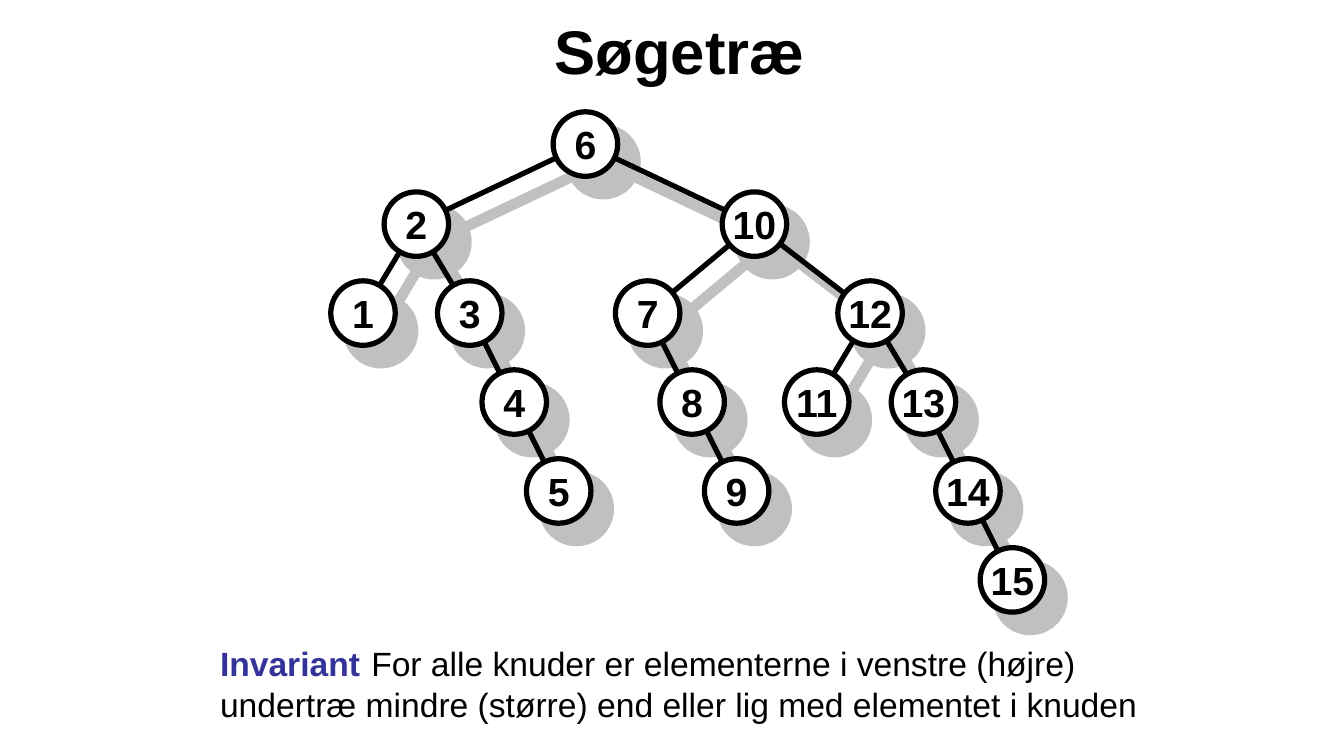
from lxml.etree import SubElement
from pptx import Presentation
from pptx.dml.color import RGBColor as Rgb
from pptx.enum.shapes import MSO_CONNECTOR as Conn, MSO_SHAPE as Shape
from pptx.enum.text import MSO_ANCHOR as Anchor, PP_ALIGN as Align
from pptx.oxml.ns import qn
from pptx.util import Inches, Pt

HUES = {"ink": "000000", "paper": "FFFFFF", "shade": "C0C0C0", "key": "333399"}
ROWS = 85
LEFT, TOP = 40.8, 16.2
SIZE, DROP = 7.25, 2
NODES = {
    6: (25, 0), 2: (6, 9), 10: (44, 9),
    1: (0, 19), 3: (12, 19), 7: (32, 19), 12: (57, 19),
    4: (17, 29), 8: (37, 29), 11: (51, 29), 13: (63, 29),
    5: (22, 39), 9: (42, 39), 14: (68, 39), 15: (73, 49),
}
EDGES = [(11, 12), (13, 15), (2, 6), (6, 10), (10, 12), (7, 10),
         (7, 9), (3, 5), (12, 13), (2, 3), (1, 2)]


class Board:
    font = "Arial"

    def __init__(self, deck):
        self.slide = deck.slides.add_slide(deck.slide_layouts[1])
        self.cell = deck.slide_height / ROWS

    def hue(self, name):
        return Rgb.from_string(HUES[name])

    def grid(self, *cells):
        return [round(n * self.cell) for n in cells]

    def run(self, para, text, size, hue="ink", bold=True):
        run = para.add_run()
        run.text = text
        font = run.font
        font.name, font.size, font.bold = self.font, Pt(size), bold
        font.color.rgb = self.hue(hue)

    def place(self, slot, box, anchor):
        item = self.slide.placeholders[slot]
        item.left, item.top, item.width, item.height = self.grid(*box)
        frame = item.text_frame
        frame.word_wrap, frame.vertical_anchor = True, anchor
        return frame.paragraphs[0]

    def title(self, text, box):
        para = self.place(0, box, Anchor.MIDDLE)
        para.alignment = Align.CENTER
        self.run(para, text, 44)

    def note(self, head, text, box, tab):
        para = self.place(1, box, Anchor.TOP)
        para.space_before = Pt(12)
        props = para._p.get_or_add_pPr()
        props.set("marL", "0")
        props.set("indent", "0")
        SubElement(props, qn("a:buNone"))
        tabs = SubElement(props, qn("a:tabLst"))
        SubElement(tabs, qn("a:tab"), pos=str(self.grid(tab)[0]), algn="l")
        self.run(para, head + "\t", 24, "key")
        self.run(para, text, 24, bold=False)

    def spot(self, key, drop):
        col, row = NODES[key]
        return LEFT + col + drop, TOP + row + drop

    def edge(self, low, high, hue, width, drop):
        ends = self.spot(low, drop) + self.spot(high, drop)
        line = self.slide.shapes.add_connector(Conn.STRAIGHT, *self.grid(*ends))
        line.line.color.rgb = self.hue(hue)
        line.line.width = Pt(width)
        SubElement(line._element.spPr, qn("a:effectLst"))

    def node(self, key, fill, hue, width, drop):
        x, y = self.spot(key, drop)
        box = self.grid(x - SIZE / 2, y - SIZE / 2, SIZE, SIZE)
        disc = self.slide.shapes.add_shape(Shape.OVAL, *box)
        disc.shadow.inherit = False
        disc.fill.solid()
        disc.fill.fore_color.rgb = self.hue(fill)
        disc.line.color.rgb = self.hue(hue)
        disc.line.width = Pt(width)
        return disc

    def label(self, disc, text):
        frame = disc.text_frame
        frame.margin_left = frame.margin_right = 0
        frame.margin_top = frame.margin_bottom = 0
        frame.word_wrap, frame.vertical_anchor = False, Anchor.MIDDLE
        para = frame.paragraphs[0]
        para.alignment = Align.CENTER
        self.run(para, text, 28)

    def tree(self, fill, hue, width, drop=0, named=False):
        for low, high in EDGES:
            self.edge(low, high, hue, width, drop)
        for key in NODES:
            disc = self.node(key, fill, hue, width, drop)
            if named:
                self.label(disc, str(key))


def main():
    deck = Presentation()
    deck.slide_width, deck.slide_height = Inches(13.33), Inches(7.5)
    board = Board(deck)
    board.title("Søgetræ", (25.4, 0, 102, 11.3))
    board.note("Invariant", "For alle knuder er elementerne i venstre (højre) "
               "undertræ mindre (større) end eller lig med elementet i knuden",
               (23.6, 71.75, 106.8, 10.3), 18.95)
    board.tree("shade", "shade", 7.63, DROP)
    board.tree("paper", "ink", 3.75, named=True)
    deck.save("out.pptx")


if __name__ == "__main__":
    main()
